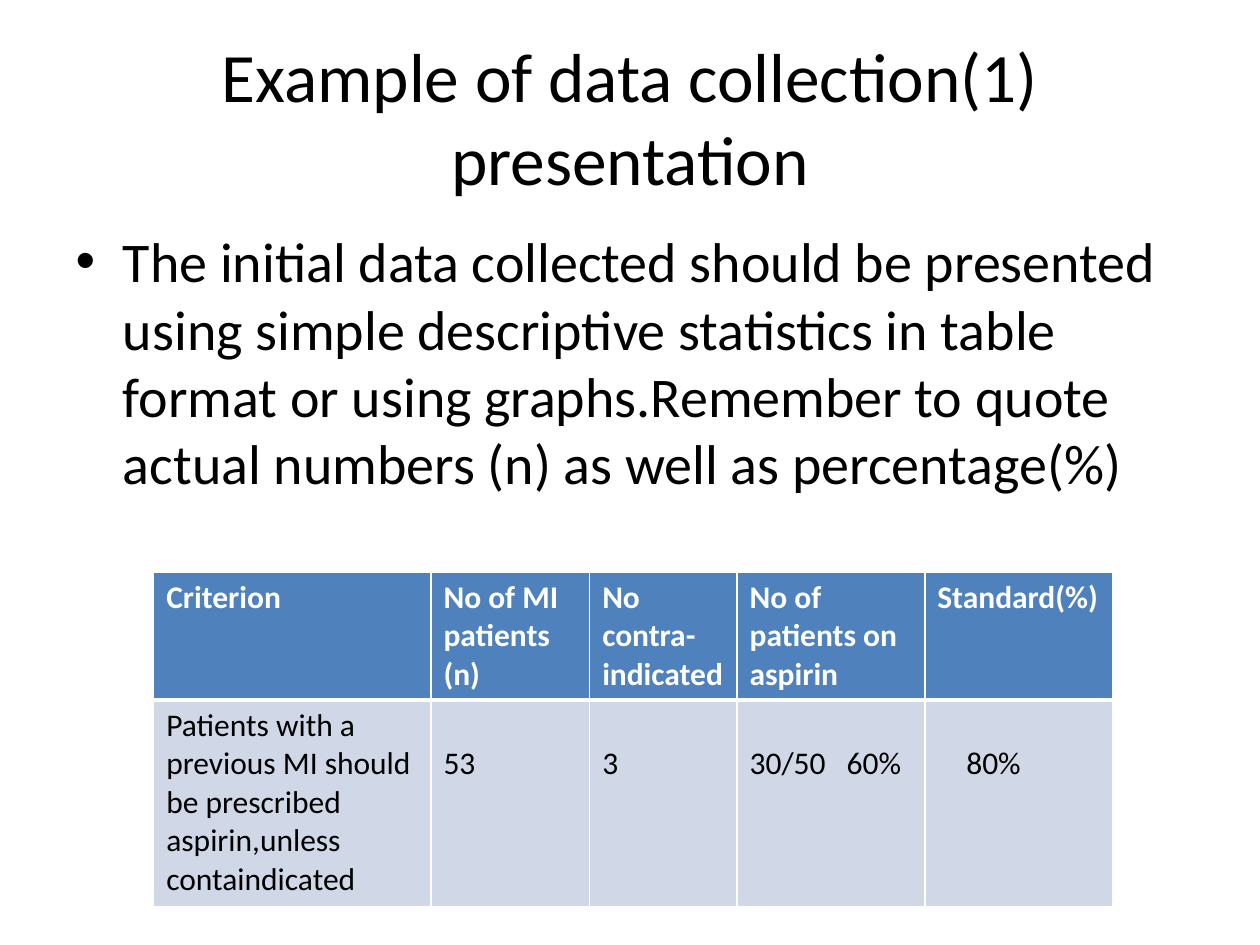
import pptx
import pptx.dml.color
import pptx.enum.text
import pptx.oxml.ns
import pptx.util
from lxml import etree
from pptx.util import Inches

BLACK = pptx.dml.color.RGBColor(0, 0, 0)
WHITE = pptx.dml.color.RGBColor(255, 255, 255)
HEADER_BLUE = pptx.dml.color.RGBColor(0x4F, 0x81, 0xBD)
PALE_BLUE = pptx.dml.color.RGBColor(0xD0, 0xD8, 0xE8)
FONT = "Calibri"

COLUMN_WIDTHS = (2.2, 1.26, 1.17, 1.49, 1.49)
ROW_HEIGHTS = (0.96, 1.64)
HEADERS = ("Criterion", "No of MI patients (n)", "No contra-indicated",
           "No of patients on aspirin", "Standard(%)")
RESULTS = ("Patients with a previous MI should be prescribed aspirin,unless containdicated",
           "53", "3", "30/50\t60%", "80%")


def add_run(paragraph, text, size, color, bold=False):
    run = paragraph.add_run()
    run.text = text
    run.font.name = FONT
    run.font.size = pptx.util.Pt(size)
    run.font.bold = bold
    run.font.color.rgb = color


def fill_placeholder(placeholder, box, text, size):
    placeholder.left, placeholder.top, placeholder.width, placeholder.height = map(Inches, box)
    frame = placeholder.text_frame
    frame.auto_size = pptx.enum.text.MSO_AUTO_SIZE.NONE
    add_run(frame.paragraphs[0], text, size, BLACK)


def add_child(parent, tag, **attributes):
    return etree.SubElement(parent, pptx.oxml.ns.qn(tag), attributes)


def set_borders(cell, top, bottom):
    """Draw white cell borders, with top and bottom widths in points."""
    properties = cell._tc.get_or_add_tcPr()
    for side, width in (("L", 1), ("R", 1), ("T", top), ("B", bottom)):
        line = add_child(properties, f"a:ln{side}", w=str(pptx.util.Pt(width)))
        add_child(add_child(line, "a:solidFill"), "a:srgbClr", val=str(WHITE))


def set_tab_stop(paragraph, position):
    tabs = add_child(paragraph._p.get_or_add_pPr(), "a:tabLst")
    add_child(tabs, "a:tab", pos=str(Inches(position)), algn="l")


def fill_cell(cell, text, fill, color, bold, top, bottom):
    set_borders(cell, top, bottom)
    cell.fill.solid()
    cell.fill.fore_color.rgb = fill
    add_run(cell.text_frame.paragraphs[0], text, 18, color, bold)


def add_audit_table(slide):
    table = slide.shapes.add_table(
        len(ROW_HEIGHTS), len(COLUMN_WIDTHS), Inches(1.22), Inches(4.54),
        Inches(sum(COLUMN_WIDTHS)), Inches(sum(ROW_HEIGHTS))).table
    for column, width in zip(table.columns, COLUMN_WIDTHS):
        column.width = Inches(width)
    for row, height in zip(table.rows, ROW_HEIGHTS):
        row.height = Inches(height)
    for index, (header, result) in enumerate(zip(HEADERS, RESULTS)):
        fill_cell(table.cell(0, index), header, HEADER_BLUE, WHITE, True, 1, 3)
        result_cell = table.cell(1, index)
        fill_cell(result_cell, result, PALE_BLUE, BLACK, False, 3, 1)
        if index > 0:
            # Figures sit level with the second line of the criterion.
            result_cell.margin_top = Inches(0.35)
    set_tab_stop(table.cell(1, 3).text_frame.paragraphs[0], 0.77)
    table.cell(1, 4).margin_left = Inches(0.33)


def main():
    presentation = pptx.Presentation()
    presentation.slide_width = Inches(10)
    presentation.slide_height = Inches(7.5)
    slide = presentation.slides.add_slide(presentation.slide_layouts[1])
    fill_placeholder(slide.shapes.title, (0.5, 0.3, 9, 1.25),
                     "Example of data collection(1) presentation", 39.6)
    fill_placeholder(slide.placeholders[1], (0.5, 1.75, 9, 4.95),
                     "The initial data collected should be presented using simple "
                     "descriptive statistics in table format or using graphs.Remember "
                     "to quote actual numbers (n) as well as percentage(%)", 32)
    add_audit_table(slide)
    presentation.save("out.pptx")


if __name__ == "__main__":
    main()
